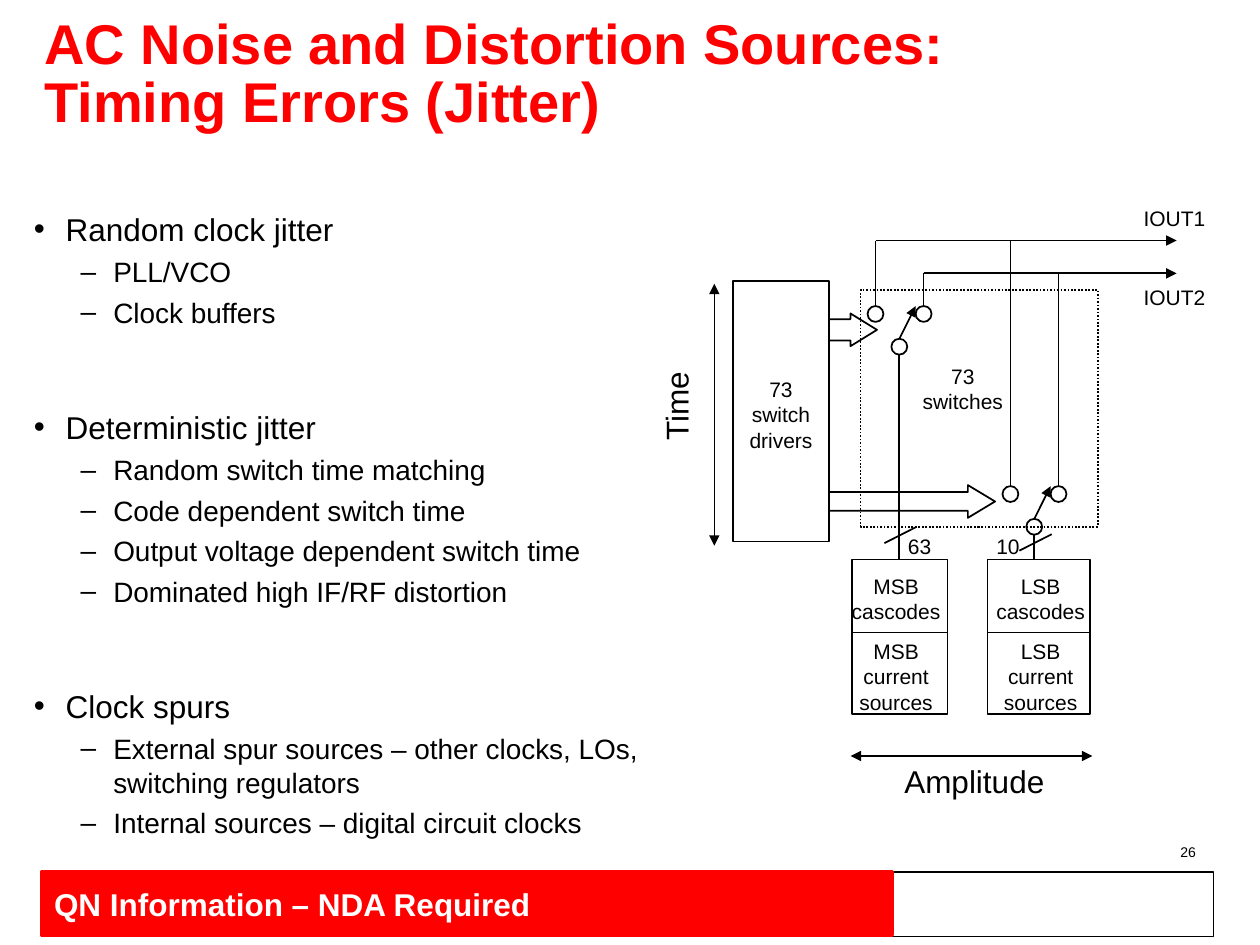
from dataclasses import dataclass

import lxml.etree
import pptx
import pptx.dml.color
import pptx.enum.dml
import pptx.enum.shapes
import pptx.enum.text
import pptx.oxml.ns
import pptx.util

Cm = pptx.util.Cm
Pt = pptx.util.Pt
RGB = pptx.dml.color.RGBColor
SHAPE = pptx.enum.shapes.MSO_SHAPE
ALIGN = pptx.enum.text.PP_ALIGN
ANCHOR = pptx.enum.text.MSO_ANCHOR
qn = pptx.oxml.ns.qn


@dataclass(frozen=True)
class Theme:
    font: str = "Arial"
    ink: RGB = RGB(0, 0, 0)
    accent: RGB = RGB(255, 0, 0)
    paper: RGB = RGB(255, 255, 255)
    title: int = 32
    heading: int = 18
    detail: int = 16
    label: int = 12
    page: int = 8
    stroke: float = 1
    thin: float = 0.75


THEME = Theme()

TOPICS = [
    ("Random clock jitter", ["PLL/VCO", "Clock buffers"]),
    ("Deterministic jitter", [
        "Random switch time matching",
        "Code dependent switch time",
        "Output voltage dependent switch time",
        "Dominated high IF/RF distortion",
    ]),
    ("Clock spurs", [
        "External spur sources – other clocks, LOs, switching regulators",
        "Internal sources – digital circuit clocks",
    ]),
]

RAIL_1, RAIL_2, RAIL_END = 4.85, 5.51, 23.72
CASCODE_TOP, SOURCE_TOP = 11.28, 12.75
NODE = 0.32
POLE_DX, THROW_DX, POLE_DY = 0.48, 0.97, 0.66


def style(paragraph, size, color=THEME.ink, bold=False):
    for run in paragraph.runs:
        run.font.name = THEME.font
        run.font.size = Pt(size)
        run.font.bold = bold
        run.font.color.rgb = color


def place(shape, left, top, width, height):
    shape.left, shape.top, shape.width, shape.height = map(Cm, (left, top, width, height))


def add_outline(slide, kind, box, width=THEME.stroke, color=THEME.ink):
    outline = slide.shapes.add_shape(kind, *map(Cm, box))
    outline.shadow.inherit = False
    outline.fill.background()
    outline.line.color.rgb = color
    outline.line.width = Pt(width)
    return outline


def add_label(slide, text, box, size=THEME.label, align=ALIGN.CENTER):
    label = slide.shapes.add_textbox(*map(Cm, box))
    label.text_frame.word_wrap = True
    label.text_frame.text = text
    paragraph = label.text_frame.paragraphs[0]
    paragraph.alignment = align
    style(paragraph, size)
    return label


def add_line(slide, start, end, width=THEME.stroke, arrows=()):
    line = slide.shapes.add_connector(
        pptx.enum.shapes.MSO_CONNECTOR.STRAIGHT, *map(Cm, start + end))
    line.line.color.rgb = THEME.ink
    line.line.width = Pt(width)
    properties = line._element.spPr
    stroke = properties.find(qn("a:ln"))
    for arrow in arrows:
        lxml.etree.SubElement(stroke, qn(f"a:{arrow}"), type="triangle")
    lxml.etree.SubElement(properties, qn("a:effectLst"))


def add_footer(slide):
    add_outline(slide, SHAPE.RECTANGLE, (0.94, 17.58, 23.52, 1.3), THEME.thin)
    banner = add_outline(slide, SHAPE.RECTANGLE, (0.84, 17.58, 17.15, 1.27), 2, THEME.accent)
    banner.fill.solid()
    banner.fill.fore_color.rgb = THEME.accent
    banner.text_frame.text = "QN Information – NDA Required"
    banner.text_frame.vertical_anchor = ANCHOR.MIDDLE
    paragraph = banner.text_frame.paragraphs[0]
    paragraph.alignment = ALIGN.LEFT
    style(paragraph, THEME.heading, THEME.paper, True)
    add_label(slide, "26", (18.44, 16.89, 5.92, 0.58), THEME.page, ALIGN.RIGHT)


def fill_title(title):
    place(title, 0.64, 0.41, 23.5, 2.26)
    frame = title.text_frame
    frame.text = "AC Noise and Distortion Sources:\vTiming Errors (Jitter)"
    frame.auto_size = pptx.enum.text.MSO_AUTO_SIZE.NONE
    frame.vertical_anchor = ANCHOR.MIDDLE
    paragraph = frame.paragraphs[0]
    paragraph.alignment = ALIGN.LEFT
    paragraph.line_spacing = 0.85
    style(paragraph, THEME.title, THEME.accent, True)


def fill_topics(body):
    place(body, 0.43, 4.11, 13.54, 13.03)
    frame = body.text_frame
    frame.auto_size = pptx.enum.text.MSO_AUTO_SIZE.NONE
    entries = []
    for heading, details in TOPICS:
        entries.append((heading, 0, THEME.heading, 45, 0.64, -0.64))
        entries += [(detail, 1, THEME.detail, 4, 1.6, -0.66) for detail in details]
    for index, (text, level, size, gap, margin, indent) in enumerate(entries):
        paragraph = frame.add_paragraph() if index else frame.paragraphs[0]
        paragraph.text = text
        paragraph.level = level
        paragraph.space_before = Pt(gap if index else 0)
        properties = paragraph._p.get_or_add_pPr()
        properties.set("marL", str(Cm(margin)))
        properties.set("indent", str(Cm(indent)))
        style(paragraph, size)


def add_switch(slide, left, top):
    pole, throw = left + POLE_DX, left + THROW_DX
    for x, y in ((left, top), (throw, top), (pole, top + POLE_DY)):
        add_outline(slide, SHAPE.OVAL, (x - NODE / 2, y, NODE, NODE))
    add_line(slide, (pole, top + POLE_DY), (throw - NODE / 2, top), arrows=["tailEnd"])
    add_line(slide, (left, top), (left, RAIL_1))
    add_line(slide, (throw, top), (throw, RAIL_2))
    add_line(slide, (pole, top + POLE_DY + NODE), (pole, CASCODE_TOP))


def add_current_column(slide, bit, left, width, label_left, label_width):
    add_outline(slide, SHAPE.RECTANGLE, (left, CASCODE_TOP, width, SOURCE_TOP - CASCODE_TOP))
    add_outline(slide, SHAPE.RECTANGLE, (left, SOURCE_TOP, width, 1.65))
    add_label(slide, f"{bit} cascodes", (label_left, 11.43, label_width, 1.27))
    add_label(slide, f"{bit} current sources", (label_left, SOURCE_TOP, label_width, 1.78))


def add_bus(slide, count, start, label_left):
    x, y = start
    add_line(slide, start, (x + 0.65, y - 0.33))
    add_label(slide, count, (label_left, 10.63, 1.12, 0.76))


def add_drive_arrow(slide, top, length, shaft, head):
    arrow = add_outline(slide, SHAPE.RIGHT_ARROW, (16.71, top, length, 0.66))
    arrow.adjustments[0] = shaft
    arrow.adjustments[1] = head


def add_converter(slide):
    add_outline(slide, SHAPE.RECTANGLE, (14.78, 5.66, 1.93, 5.26))
    add_label(slide, "73 switch drivers", (14.78, 7.47, 1.93, 1.78))
    add_current_column(slide, "MSB", 17.17, 1.93, 16.87, 2.39)
    add_current_column(slide, "LSB", 19.91, 2.06, 19.76, 2.44)
    add_switch(slide, 17.65, 6.17)
    add_switch(slide, 20.37, 9.8)
    add_drive_arrow(slide, 9.78, 3.35, 0.57, 0.83)
    add_drive_arrow(slide, 6.32, 0.97, 0.65, 0.81)
    for start, rail, name, label_top in (
            (17.65, RAIL_1, "IOUT1", 4.01), (18.62, RAIL_2, "IOUT2", 5.61)):
        add_line(slide, (start, rail), (RAIL_END, rail), arrows=["tailEnd"])
        add_label(slide, name, (22.62, label_top, 1.93, 0.76), align=ALIGN.RIGHT)
    add_bus(slide, "63", (17.83, 10.95), 17.98)
    add_bus(slide, "10", (20.55, 11.1), 19.76)
    bank = add_outline(slide, SHAPE.RECTANGLE, (17.35, 5.84, 4.78, 4.78))
    bank.line.dash_style = pptx.enum.dml.MSO_LINE.ROUND_DOT
    add_label(slide, "73 switches", (18.29, 7.21, 2.24, 1.27))


def add_axes(slide):
    both = ["headEnd", "tailEnd"]
    add_line(slide, (17.15, 15.24), (22.02, 15.24), THEME.thin, both)
    add_label(slide, "Amplitude", (17.98, 15.24, 3.51, 1.02), THEME.heading, ALIGN.LEFT)
    add_line(slide, (14.4, 11), (14.4, 5.72), THEME.thin, both)
    time = add_label(slide, "Time", (12.67, 7.65, 1.93, 1.02), THEME.heading, ALIGN.LEFT)
    time.rotation = 270


def main():
    deck = pptx.Presentation()
    deck.slide_width, deck.slide_height = Cm(25.4), Cm(19.05)
    slide = deck.slides.add_slide(deck.slide_layouts[1])
    add_footer(slide)
    fill_title(slide.shapes.title)
    fill_topics(slide.placeholders[1])
    add_converter(slide)
    add_axes(slide)
    deck.save("out.pptx")


if __name__ == "__main__":
    main()
